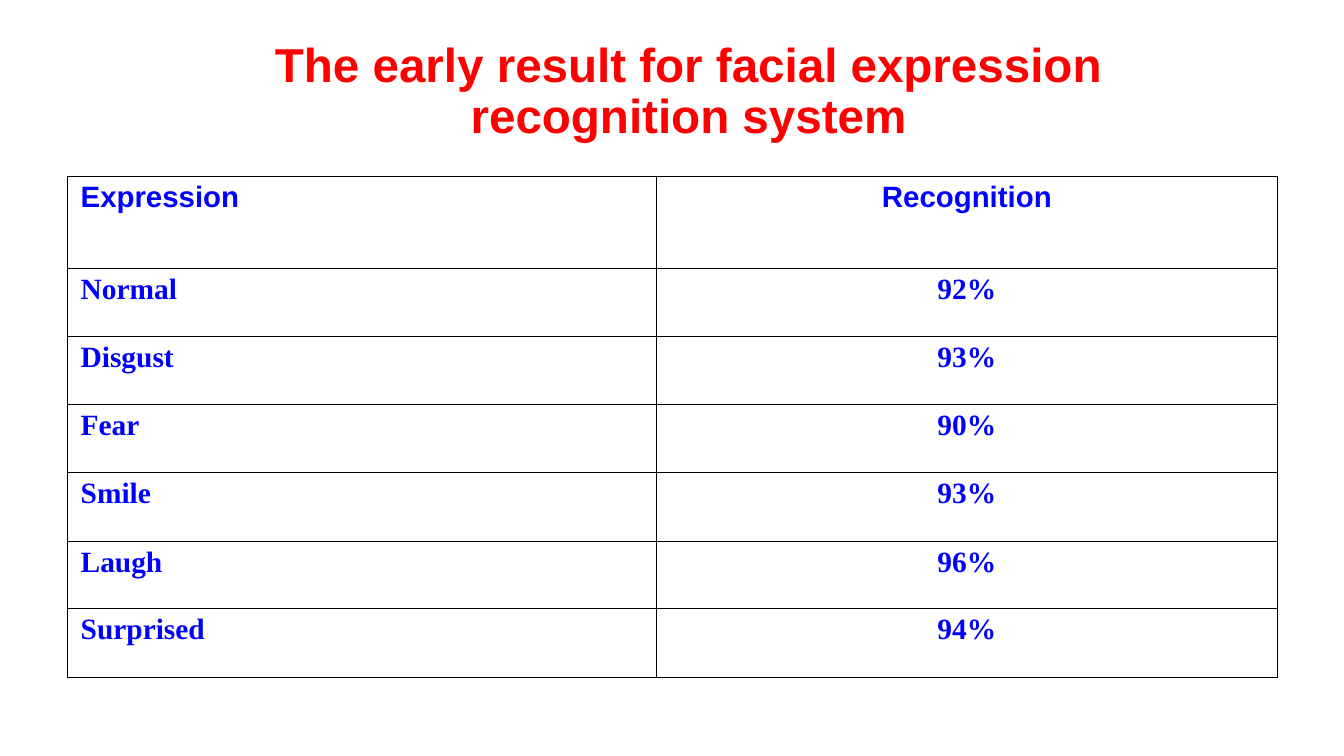
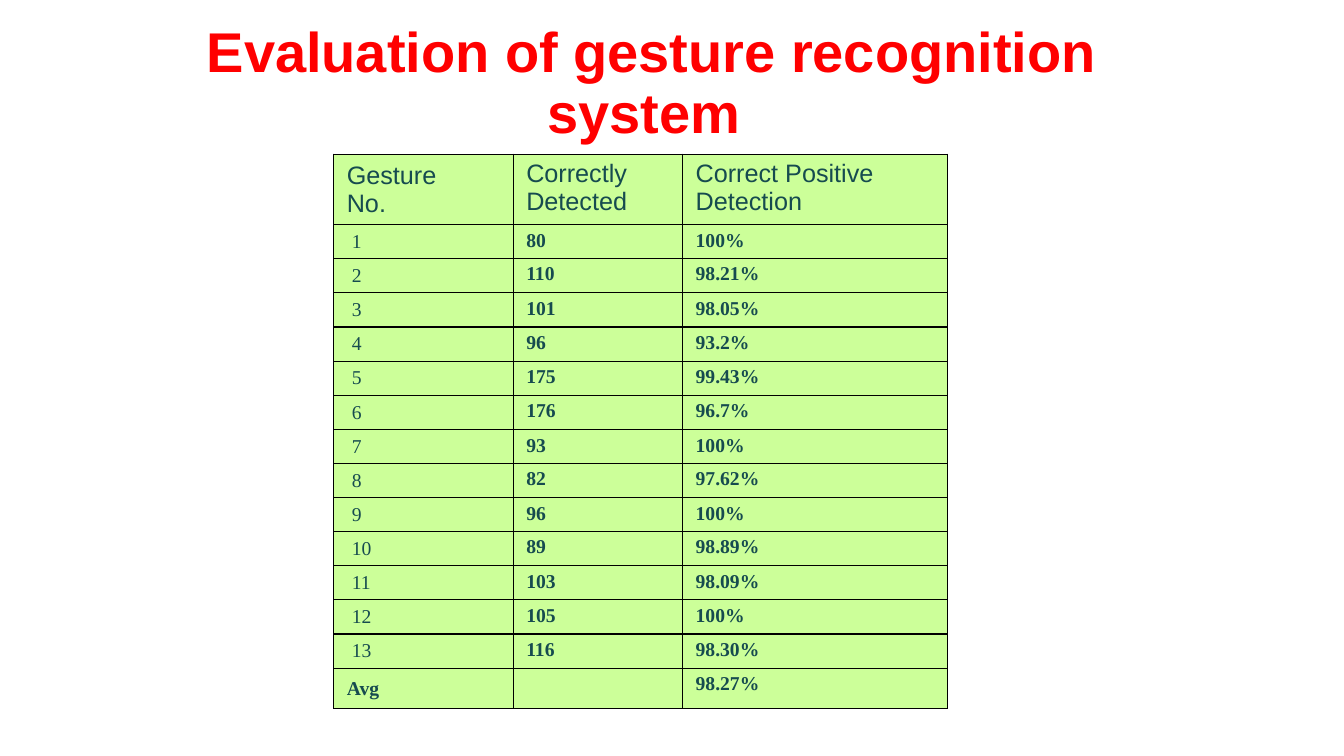
from dataclasses import dataclass
from typing import Optional

from lxml import etree
from pptx import Presentation
from pptx import util as u
from pptx.dml.color import RGBColor
from pptx.enum import text as t
from pptx.oxml import ns


@dataclass(frozen=True)
class Theme:
    background: str = "FFFFFF"
    title: str = "FF0000"
    blue: str = "0000FF"
    teal: str = "164B4F"
    green: str = "CCFF99"
    border: str = "000000"
    sans: str = "Arial"
    serif: str = "Times New Roman"
    expression_size: int = 21
    gesture_head_size: int = 18
    gesture_size: int = 14
    margin_x: float = 0.13
    margin_y: float = 0.05


@dataclass(frozen=True)
class Style:
    font: str
    size: int
    color: str
    bold: bool = False
    align: t.PP_ALIGN = t.PP_ALIGN.LEFT
    anchor: t.MSO_ANCHOR = t.MSO_ANCHOR.TOP
    indent: float = 0


@dataclass(frozen=True)
class Cell:
    text: str
    style: Style


@dataclass(frozen=True)
class Title:
    text: str
    size: int
    box: tuple[float, float, float, float]


@dataclass(frozen=True)
class Grid:
    left: float
    top: float
    cols: list[float]
    rows: list[float]
    cells: list[list[Cell]]
    fill: Optional[str] = None


THEME = Theme()
CENTER, MIDDLE = t.PP_ALIGN.CENTER, t.MSO_ANCHOR.MIDDLE

EXPRESSIONS = [
    ("Normal", "92%"),
    ("Disgust", "93%"),
    ("Fear", "90%"),
    ("Smile", "93%"),
    ("Laugh", "96%"),
    ("Surprised", "94%"),
]
GESTURES = [
    ("80", "100%"),
    ("110", "98.21%"),
    ("101", "98.05%"),
    ("96", "93.2%"),
    ("175", "99.43%"),
    ("176", "96.7%"),
    ("93", "100%"),
    ("82", "97.62%"),
    ("96", "100%"),
    ("89", "98.89%"),
    ("103", "98.09%"),
    ("105", "100%"),
    ("116", "98.30%"),
]


def write_text(tf, text: str, *, font: str, size: int, color: str,
               bold: bool = False, align=t.PP_ALIGN.LEFT,
               spacing: Optional[float] = None) -> None:
    tf.word_wrap = True
    for i, line in enumerate(text.split("\n")):
        p = tf.paragraphs[0] if i == 0 else tf.add_paragraph()
        p.alignment = align
        if spacing:
            p.line_spacing = spacing
        r = p.add_run()
        r.text = line
        r.font.name = font
        r.font.size = u.Pt(size)
        r.font.bold = bold
        r.font.color.rgb = RGBColor.from_string(color)


def add_title(s, title: Title) -> None:
    tf = s.shapes.add_textbox(*map(u.Inches, title.box)).text_frame
    tf.vertical_anchor = t.MSO_ANCHOR.BOTTOM
    write_text(tf, title.text, font=THEME.sans, size=title.size,
               color=THEME.title, bold=True, align=CENTER, spacing=0.9)


def add_borders(cell) -> None:
    pr = cell._tc.get_or_add_tcPr()
    for side in ("lnL", "lnR", "lnT", "lnB"):
        ln = etree.SubElement(pr, ns.qn(f"a:{side}"), w=str(u.Pt(1)))
        fill = etree.SubElement(ln, ns.qn("a:solidFill"))
        etree.SubElement(fill, ns.qn("a:srgbClr"), val=THEME.border)


def format_cell(cell, content: Cell, fill: Optional[str]) -> None:
    style = content.style
    add_borders(cell)
    if fill:
        cell.fill.solid()
        cell.fill.fore_color.rgb = RGBColor.from_string(fill)
    else:
        cell.fill.background()
    cell.margin_left = u.Inches(THEME.margin_x + style.indent)
    cell.margin_right = u.Inches(THEME.margin_x)
    cell.margin_top = cell.margin_bottom = u.Inches(THEME.margin_y)
    cell.vertical_anchor = style.anchor
    if content.text:
        write_text(cell.text_frame, content.text, font=style.font,
                   size=style.size, color=style.color, bold=style.bold,
                   align=style.align)


def add_grid(s, grid: Grid) -> None:
    size = (sum(grid.cols), sum(grid.rows))
    table = s.shapes.add_table(
        len(grid.rows), len(grid.cols),
        *map(u.Inches, (grid.left, grid.top, *size))).table
    table.first_row = table.horz_banding = False
    for col, width in zip(table.columns, grid.cols):
        col.width = u.Inches(width)
    for row, height, contents in zip(table.rows, grid.rows, grid.cells):
        row.height = u.Inches(height)
        for cell, content in zip(row.cells, contents):
            format_cell(cell, content, grid.fill)


def add_slide(prs, title: Title, grid: Grid) -> None:
    s = prs.slides.add_slide(prs.slide_layouts[6])
    s.background.fill.solid()
    s.background.fill.fore_color.rgb = RGBColor.from_string(THEME.background)
    add_title(s, title)
    add_grid(s, grid)


def expression_grid() -> Grid:
    def pair(label: str, value: str, font: str) -> list[Cell]:
        size, color = THEME.expression_size, THEME.blue
        return [Cell(label, Style(font, size, color, True)),
                Cell(value, Style(font, size, color, True, CENTER))]

    cells = [pair("Expression", "Recognition", THEME.sans)]
    cells += [pair(*row, THEME.serif) for row in EXPRESSIONS]
    rows = [0.91] + [0.68, 0.67, 0.68] * 2
    return Grid(0.67, 1.75, [5.84, 6.16], rows, cells)


def gesture_grid() -> Grid:
    head = (THEME.sans, THEME.gesture_head_size, THEME.teal)
    body = (THEME.serif, THEME.gesture_size, THEME.teal)
    heading = Style(*head)
    number = Style(*body, anchor=MIDDLE, indent=0.05)
    value = Style(*body, bold=True)
    average = Style(*body, bold=True, anchor=MIDDLE)

    cells = [[Cell("Gesture\nNo.", Style(*head, anchor=MIDDLE)),
              Cell("Correctly Detected", heading),
              Cell("Correct Positive Detection", heading)]]
    cells += [[Cell(str(i), number), Cell(count, value), Cell(rate, value)]
              for i, (count, rate) in enumerate(GESTURES, 1)]
    cells.append([Cell("Avg", average), Cell("", value),
                  Cell("98.27%", value)])
    short_rows = (1, 7, 9)
    rows = [0.67]
    rows += [0.32 if i in short_rows else 0.34
             for i in range(1, len(GESTURES) + 1)]
    rows.append(0.4)
    return Grid(3.31, 1.53, [1.78, 1.68, 2.63], rows, cells, THEME.green)


def main() -> None:
    prs = Presentation()
    prs.slide_width, prs.slide_height = u.Inches(13.33), u.Inches(7.5)
    add_slide(prs, Title(
        "The early result for facial expression recognition system",
        34, (2.6, 0.23, 8.46, 1.25)), expression_grid())
    add_slide(prs, Title(
        "Evaluation of gesture recognition system ",
        40, (1.67, 0.08, 9.58, 1.41)), gesture_grid())
    prs.save("out.pptx")


if __name__ == "__main__":
    main()
